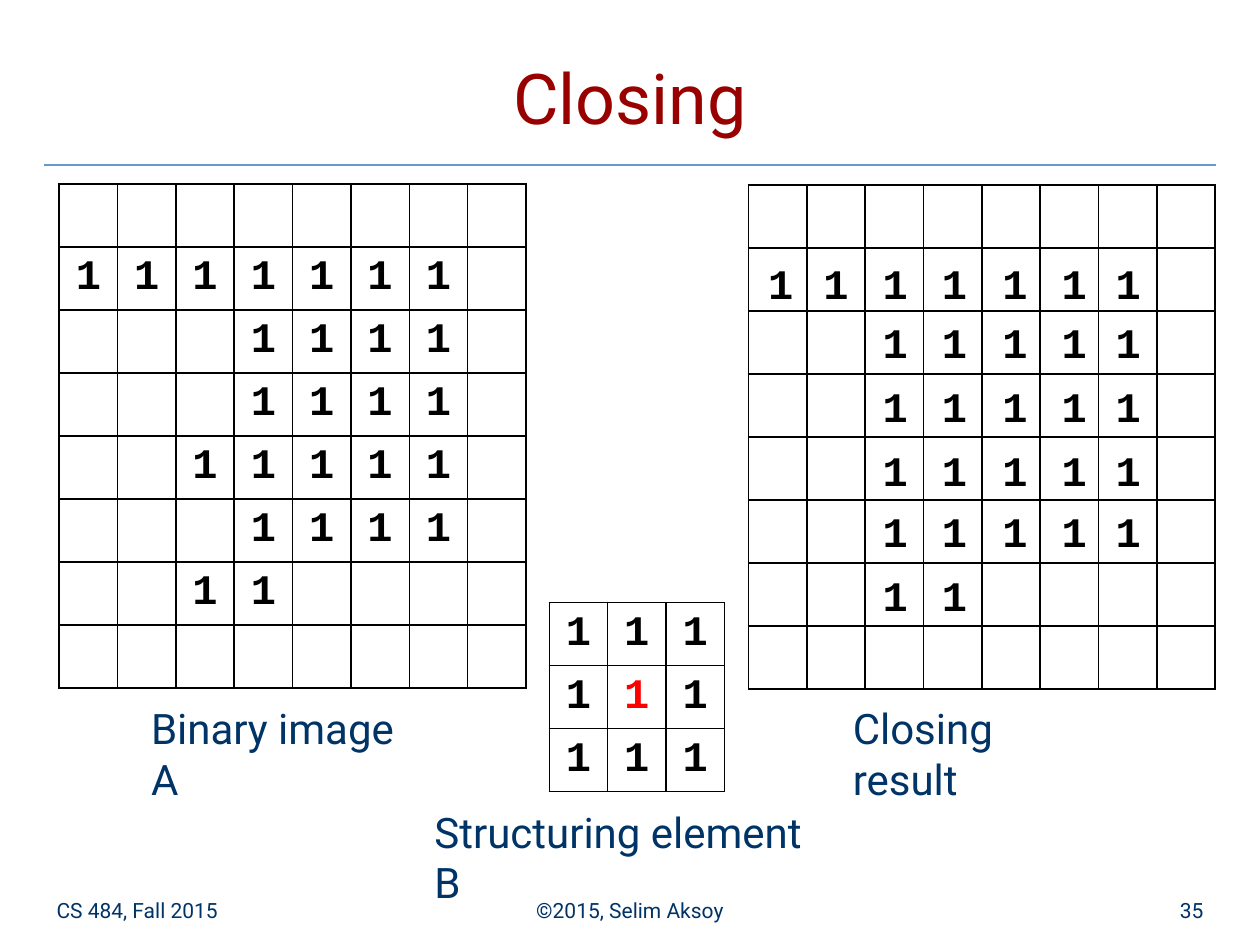
from lxml.etree import SubElement
from pptx import Presentation
from pptx.dml.color import RGBColor
from pptx.enum.shapes import MSO_CONNECTOR
from pptx.enum.text import MSO_ANCHOR, PP_ALIGN
from pptx.oxml.ns import qn
from pptx.util import Inches, Pt

NAVY = RGBColor(0x00, 0x33, 0x66)
DARK_RED = RGBColor(0x99, 0x00, 0x00)
RED = RGBColor(0xFF, 0x00, 0x00)
BLACK = RGBColor(0x00, 0x00, 0x00)
RULE_BLUE = RGBColor(0x66, 0x99, 0xCC)

CELL_WIDTH, CELL_HEIGHT = 0.463, 0.5

BINARY_IMAGE = [
    "........",
    "1111111.",
    "...1111.",
    "...1111.",
    "..11111.",
    "...1111.",
    "..11....",
    "........",
]
STRUCTURING_ELEMENT = ["111"] * 3
EMPTY_GRID = ["." * 8] * 8

CLOSING_RESULT = ["1111111", "..11111", "..11111", "..11111", "..11111", "..11..."]
RESULT_LEFTS = [5.94, 6.38, 6.85, 7.32, 7.8, 8.27, 8.7]
RESULT_TOPS = [2.02, 2.49, 3, 3.51, 3.99, 4.5]


def write(paragraph, text, size, color, font="Roboto", bold=False, align=PP_ALIGN.LEFT):
    paragraph.alignment = align
    run = paragraph.add_run()
    run.text = text
    run.font.size = Pt(size)
    run.font.name = font
    run.font.bold = bold
    run.font.color.rgb = color


def write_one(paragraph, color=BLACK):
    write(paragraph, "1", 24, color, "Courier New", True, PP_ALIGN.CENTER)


def add_label(slide, box, text, size, color, align=PP_ALIGN.LEFT,
              anchor=MSO_ANCHOR.TOP, wrap=True):
    frame = slide.shapes.add_textbox(*map(Inches, box)).text_frame
    frame.word_wrap = wrap
    frame.vertical_anchor = anchor
    write(frame.paragraphs[0], text, size, color, align=align)


def add_header(slide, left, top, width):
    add_label(slide, (left, top, width, 0.94), "Closing", 40, DARK_RED,
              PP_ALIGN.CENTER, MSO_ANCHOR.BOTTOM)
    rule_top = Inches(top + 1.1)
    rule = slide.shapes.add_connector(MSO_CONNECTOR.STRAIGHT, Inches(left), rule_top,
                                      Inches(left + width), rule_top)
    rule.line.color.rgb = RULE_BLUE
    rule.line.width = Pt(0.75)
    SubElement(rule._element.spPr, qn("a:effectLst"))


def add_footer(slide, left, top, width):
    side, middle = 2.08, 3.17
    for text, x, part_width, align in [
        ("CS 484, Fall 2015", left, side, PP_ALIGN.LEFT),
        ("©2015, Selim Aksoy", left + (width - middle) / 2, middle, PP_ALIGN.CENTER),
        ("35", left + width - side, side, PP_ALIGN.RIGHT),
    ]:
        add_label(slide, (x, top, part_width, 0.35), text, 12, NAVY, align,
                  MSO_ANCHOR.BOTTOM)


def outline_cell(cell):
    properties = cell._tc.get_or_add_tcPr()
    for side in ("a:lnL", "a:lnR", "a:lnT", "a:lnB"):
        line = SubElement(properties, qn(side), w=str(Pt(1)))
        fill = SubElement(line, qn("a:solidFill"))
        SubElement(fill, qn("a:srgbClr"), val=str(BLACK))
    cell.fill.background()


def add_pixel_grid(slide, left, top, pattern, origin=None):
    """Draw a table with a 1 wherever the pattern has one; the origin cell is red."""
    rows, columns = len(pattern), len(pattern[0])
    table = slide.shapes.add_table(
        rows, columns, Inches(left), Inches(top),
        Inches(columns * CELL_WIDTH), Inches(rows * CELL_HEIGHT)).table
    table.first_row = table.horz_banding = False
    for column in table.columns:
        column.width = Inches(CELL_WIDTH)
    for r, row in enumerate(pattern):
        table.rows[r].height = Inches(CELL_HEIGHT)
        for c, pixel in enumerate(row):
            cell = table.cell(r, c)
            outline_cell(cell)
            cell.vertical_anchor = MSO_ANCHOR.MIDDLE
            cell.margin_top = cell.margin_bottom = Inches(0.02)
            if pixel == "1":
                write_one(cell.text_frame.paragraphs[0],
                          RED if (r, c) == origin else BLACK)


def add_result_ones(slide):
    """Lay the result's ones over the empty grid as separate text boxes."""
    for top, row in zip(RESULT_TOPS, CLOSING_RESULT):
        for left, pixel in zip(RESULT_LEFTS, row):
            if pixel != "1":
                continue
            frame = slide.shapes.add_textbox(
                Inches(left), Inches(top), Inches(0.51), Inches(0.44)).text_frame
            frame.word_wrap = True
            frame.vertical_anchor = MSO_ANCHOR.MIDDLE
            frame.margin_left = frame.margin_right = Inches(0.02)
            frame.margin_top = frame.margin_bottom = Inches(0.02)
            write_one(frame.paragraphs[0])


def main():
    presentation = Presentation()
    presentation.slide_width = Inches(10)
    presentation.slide_height = Inches(7.5)
    slide = presentation.slides.add_slide(presentation.slide_layouts[6])

    add_header(slide, 0.35, 0.21, 9.3)
    add_footer(slide, 0.35, 7.02, 9.3)

    add_label(slide, (1.1, 5.53, 2.35, 0.5), "Binary image A", 24, NAVY)
    add_label(slide, (3.35, 6.35, 3.4, 0.5), "Structuring element B", 24, NAVY, wrap=False)
    add_label(slide, (6.67, 5.53, 2.1, 0.5), "Closing result", 24, NAVY)

    add_pixel_grid(slide, 5.94, 1.47, EMPTY_GRID)
    add_pixel_grid(slide, 0.47, 1.46, BINARY_IMAGE)
    add_pixel_grid(slide, 4.36, 4.78, STRUCTURING_ELEMENT, origin=(1, 1))
    add_result_ones(slide)

    presentation.save("out.pptx")


if __name__ == "__main__":
    main()
